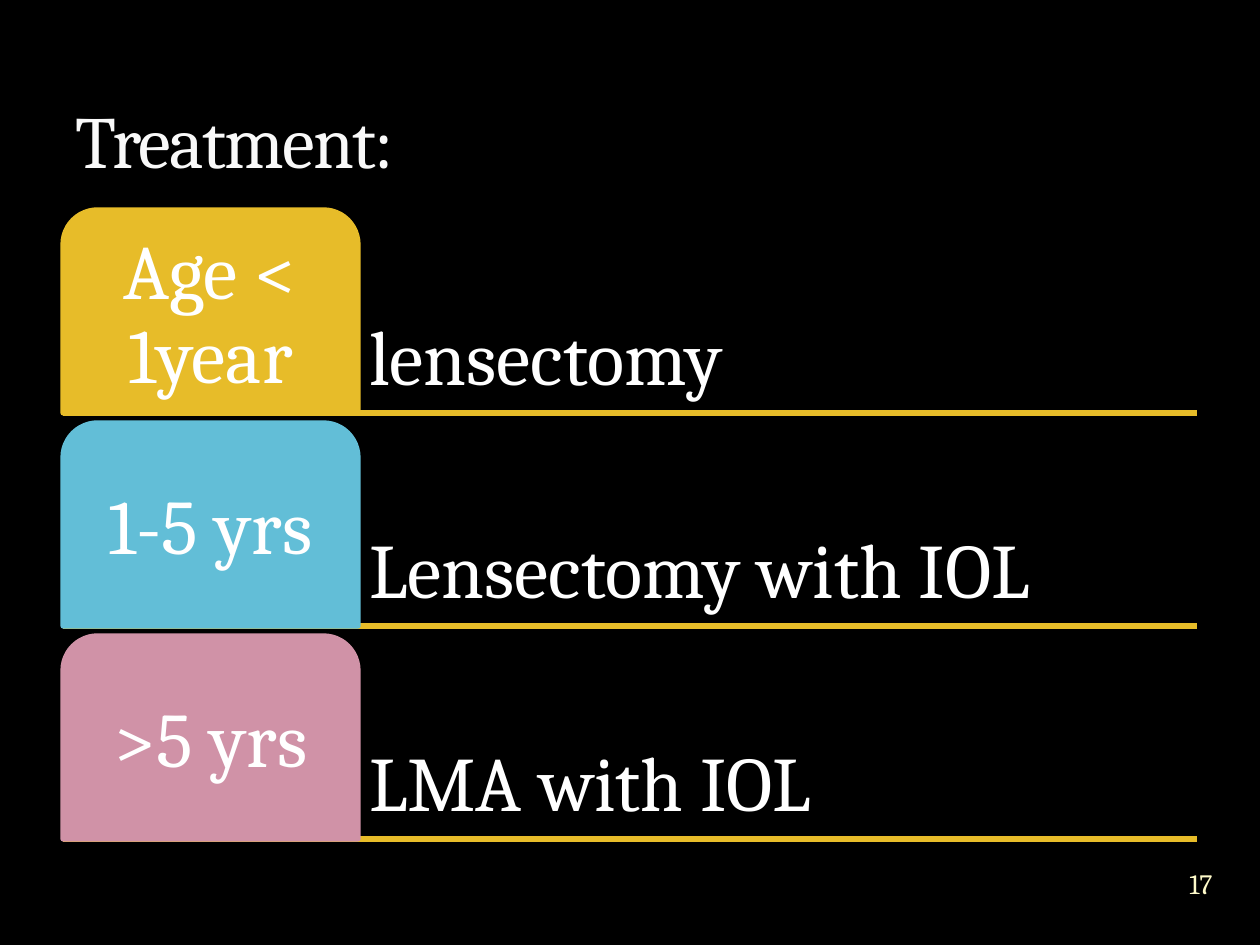
"""Build the treatment-by-age slide."""
from dataclasses import dataclass

from pptx import Presentation
from pptx.dml.color import RGBColor
from pptx.enum.shapes import MSO_CONNECTOR, MSO_SHAPE
from pptx.enum.text import MSO_ANCHOR, PP_ALIGN
from pptx.oxml.ns import qn
from pptx.util import Emu, Pt
from lxml import etree

STRAIGHT = MSO_CONNECTOR.STRAIGHT
TAB = MSO_SHAPE.ROUND_2_SAME_RECTANGLE
MIDDLE, BOTTOM = MSO_ANCHOR.MIDDLE, MSO_ANCHOR.BOTTOM
LEFT, CENTER = PP_ALIGN.LEFT, PP_ALIGN.CENTER

EMU_PER_PX = 914400 / 126
FONT = "Cambria"
BLACK, WHITE, GOLD = "000000", "FFFFFF", "E7BC29"
MARGIN, CONTENT_WIDTH = 63, 1134
FIRST_TOP, ROW_PITCH, ROW_HEIGHT = 210, 213, 203
TAB_WIDTH, TAB_PADDING, INSET = 295, 10, 11
RULE_POINTS = 3


@dataclass(frozen=True)
class Box:
    left: int
    top: int
    width: int
    height: int

    def emu(self) -> list[Emu]:
        return [px(n) for n in (self.left, self.top, self.width, self.height)]


@dataclass(frozen=True)
class Style:
    size: int
    color: str = WHITE
    align: PP_ALIGN = LEFT
    anchor: MSO_ANCHOR = BOTTOM
    inset_x: int = INSET
    inset_y: int = INSET
    line_spacing: float = 0.9
    tracking: int = 0


@dataclass(frozen=True)
class AgeGroup:
    age: str
    treatment: str
    color: str


AGE_GROUPS = [
    AgeGroup("Age < 1year", "lensectomy", GOLD),
    AgeGroup("1-5 yrs", "Lensectomy with IOL", "62BED7"),
    AgeGroup(">5 yrs", "LMA with IOL", "D092A7"),
]
TITLE = Style(42, "F9F9F9", inset_x=13, inset_y=6, line_spacing=1.0, tracking=-100)
TREATMENT = Style(44)
AGE = Style(44, align=CENTER, anchor=MIDDLE)
PAGE_NUMBER = Style(16, "FEFAC9", CENTER, MIDDLE, 0, 0, 1.0)


def px(length: int) -> Emu:
    return Emu(round(length * EMU_PER_PX))


def rgb(color: str) -> RGBColor:
    return RGBColor.from_string(color)


def add_text(page, text: str, box: Box, style: Style) -> None:
    frame = page.shapes.add_textbox(*box.emu()).text_frame
    frame.word_wrap = True
    frame.vertical_anchor = style.anchor
    frame.margin_left = frame.margin_right = px(style.inset_x)
    frame.margin_top = frame.margin_bottom = px(style.inset_y)
    para = frame.paragraphs[0]
    para.alignment = style.align
    para.line_spacing = style.line_spacing
    para.font.name = FONT
    para.font.size = Pt(style.size)
    para.font.color.rgb = rgb(style.color)
    span = para.add_run()
    span.text = text
    if style.tracking:
        span._r.get_or_add_rPr().set("spc", str(style.tracking))


def add_rule(page, y: int) -> None:
    rule = page.shapes.add_connector(
        STRAIGHT, px(MARGIN), px(y), px(MARGIN + CONTENT_WIDTH), px(y))
    rule.line.color.rgb = rgb(GOLD)
    rule.line.width = Pt(RULE_POINTS)
    etree.SubElement(rule._element.spPr, qn("a:effectLst"))


def add_tab(page, box: Box, color: str) -> None:
    tab = page.shapes.add_shape(TAB, *box.emu())
    tab.shadow.inherit = False
    tab.adjustments[0] = 0.17
    tab.fill.solid()
    tab.fill.fore_color.rgb = rgb(color)
    tab.line.color.rgb = rgb(color)
    tab.line.width = Pt(RULE_POINTS)


def add_age_group(page, group: AgeGroup, top: int) -> None:
    add_rule(page, top + ROW_HEIGHT)
    add_text(page, group.treatment,
             Box(MARGIN + TAB_WIDTH, top, CONTENT_WIDTH - TAB_WIDTH, ROW_HEIGHT), TREATMENT)
    add_tab(page, Box(MARGIN, top, TAB_WIDTH, ROW_HEIGHT), group.color)
    add_text(page, group.age,
             Box(MARGIN + TAB_PADDING, top + TAB_PADDING,
                 TAB_WIDTH - 2 * TAB_PADDING, ROW_HEIGHT - TAB_PADDING), AGE)


def main() -> None:
    deck = Presentation()
    deck.slide_width, deck.slide_height = px(1260), px(945)
    page = deck.slides.add_slide(deck.slide_layouts[6])
    page.background.fill.solid()
    page.background.fill.fore_color.rgb = rgb(BLACK)
    for row, group in enumerate(AGE_GROUPS):
        add_age_group(page, group, FIRST_TOP + row * ROW_PITCH)
    add_text(page, "Treatment:", Box(MARGIN, 21, CONTENT_WIDTH, 168), TITLE)
    add_text(page, "17", Box(1159, 852, 84, 63), PAGE_NUMBER)
    deck.save("out.pptx")


if __name__ == "__main__":
    main()
